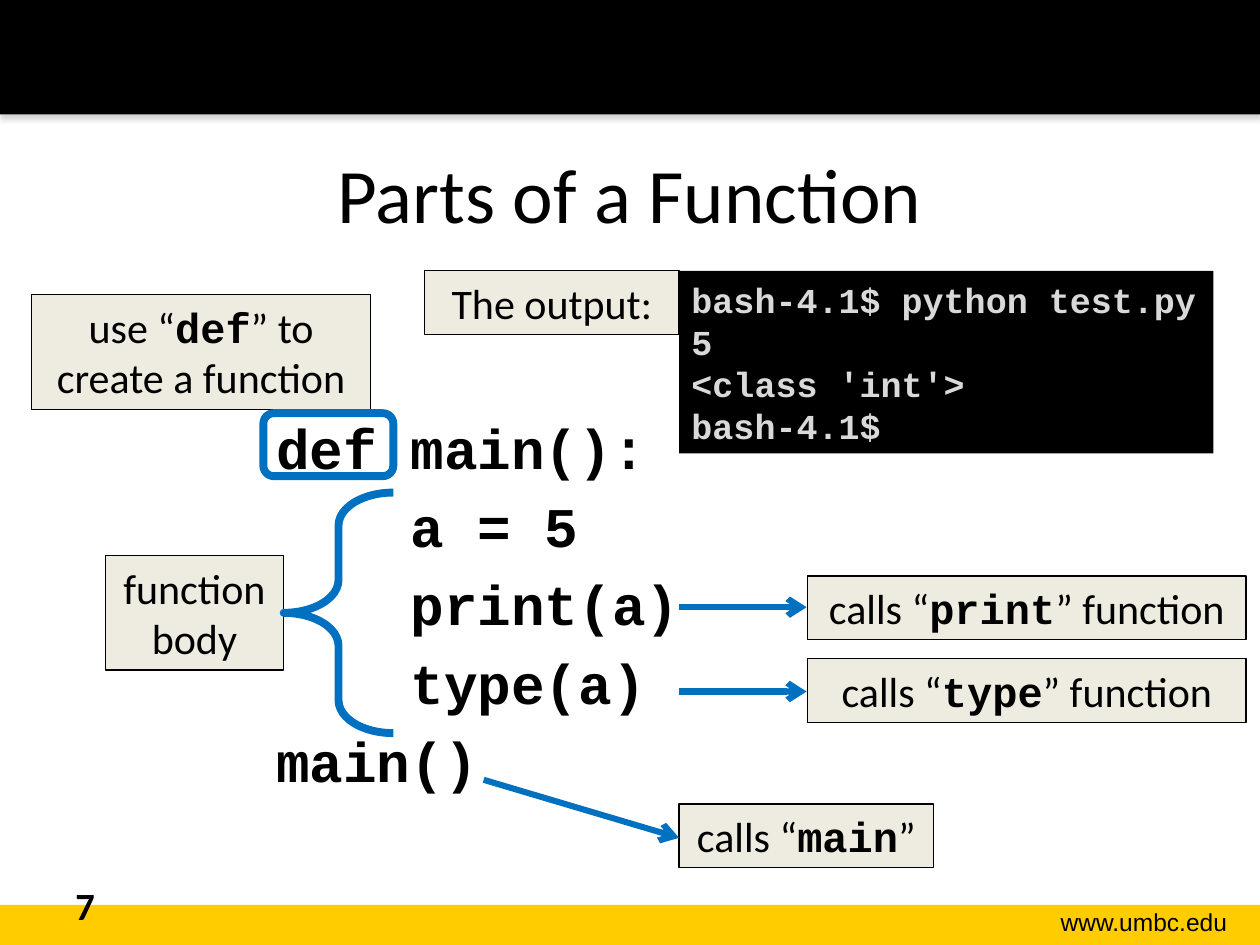
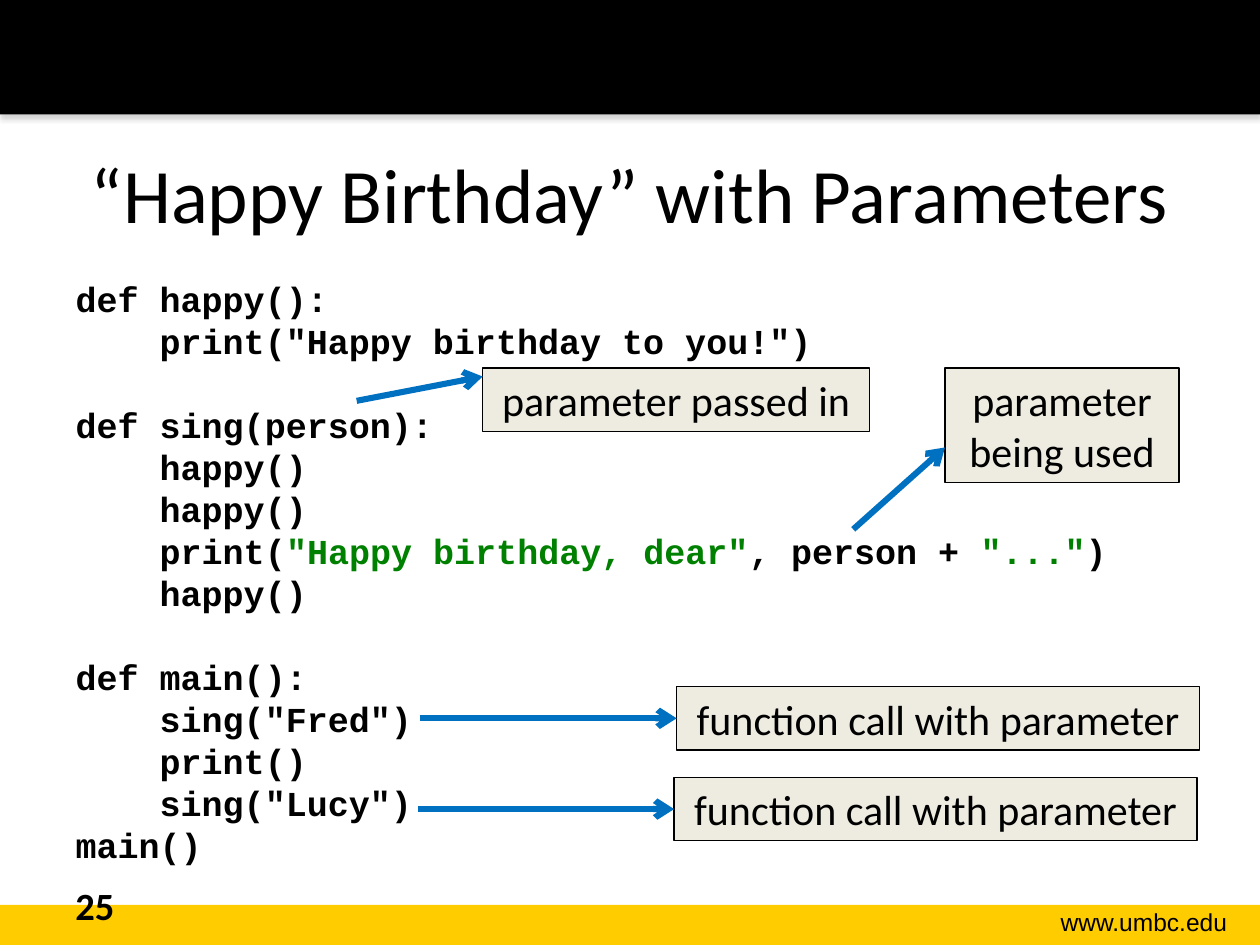
from dataclasses import dataclass

from lxml.etree import SubElement
from pptx import Presentation
from pptx.dml.color import RGBColor
from pptx.enum.shapes import MSO_CONNECTOR as Connector, MSO_SHAPE as Preset
from pptx.enum.text import MSO_ANCHOR as Anchor, MSO_AUTO_SIZE as AutoSize, PP_ALIGN as Align
from pptx.oxml.ns import qn
from pptx.presentation import Presentation as Deck
from pptx.shapes.autoshape import Shape
from pptx.slide import Slide
from pptx.text.text import TextFrame
from pptx.util import Cm, Pt

COLORS = {
    "black": "000000",
    "gold": "FFCC00",
    "cream": "EEECE1",
    "blue": "0070C0",
    "green": "008000",
    "terminal": "D9D9D9",
    "shadow": "808080",
}
MARK = "|"


@dataclass(frozen=True)
class Face:
    font: str
    bold: bool = False
    color: str = "black"


PROSE = Face("Calibri")
STRONG = Face("Calibri", bold=True)
FOOTER = Face("Arial")
CODE = Face("Courier New", bold=True)
STRING = Face("Courier New", bold=True, color="green")
OUTPUT = Face("Courier New", bold=True, color="terminal")


@dataclass(frozen=True)
class Area:
    left: float
    top: float
    width: float
    height: float

    def lengths(self) -> tuple[Cm, Cm, Cm, Cm]:
        return Cm(self.left), Cm(self.top), Cm(self.width), Cm(self.height)


@dataclass(frozen=True)
class Label:
    text: str
    left: float
    top: float
    width: float
    lines: int = 1


@dataclass(frozen=True)
class Arrow:
    start_x: float
    start_y: float
    end_x: float
    end_y: float


@dataclass(frozen=True)
class Listing:
    """Code in groups of lines; line_gap and group_gap are points."""
    groups: tuple[str, ...]
    area: Area
    size: float
    line_gap: float = 0
    group_gap: float = 0


@dataclass(frozen=True)
class Lesson:
    title: str
    number: str
    listing: Listing
    labels: tuple[Label, ...]
    arrows: tuple[Arrow, ...]


PARTS = Lesson(
    "Parts of a Function",
    "7",
    Listing(
        ("def main():\n    a = 5\n    print(a)\n    type(a)\nmain()",),
        Area(5.31, 8.2, 15.54, 9.9), size=32, line_gap=6.4,
    ),
    (
        Label("calls “|print|” function", 16.28, 11.61, 8.84),
        Label("function body", 2.13, 11.2, 3.58, lines=2),
        Label("use “|def|” to create a function", 0.64, 5.94, 6.83, lines=2),
        Label("calls “|type|” function", 16.28, 13.28, 8.84),
        Label("calls “|main|”", 13.69, 16.21, 5.13),
        Label("The output:", 8.56, 5.46, 5.13),
    ),
    (
        Arrow(13.69, 12.24, 16.26, 12.24),
        Arrow(13.69, 13.94, 16.26, 13.94),
        Arrow(9.75, 15.72, 13.69, 16.89),
    ),
)
BIRTHDAY = Lesson(
    "“Happy Birthday” with Parameters",
    "25",
    Listing(
        (
            'def happy():\n    print("Happy birthday to you!")',
            "def sing(person):\n    happy()\n    happy()\n"
            '    print(|"Happy birthday, dear"|, person + |"..."|)\n    happy()',
            'def main():\n    sing("Fred")\n    print()\n    sing("Lucy")\nmain()',
        ),
        Area(1.27, 5.46, 22.86, 11.56), size=20, group_gap=24,
    ),
    (
        Label("parameter passed in", 9.73, 7.42, 7.8),
        Label("parameter being used", 19.05, 7.42, 4.72, lines=2),
        Label("function call with parameter", 13.64, 13.84, 10.54),
        Label("function call with parameter", 13.59, 15.67, 10.54),
    ),
    (
        Arrow(7.19, 8.08, 9.73, 7.59),
        Arrow(17.2, 10.67, 19.05, 9.02),
        Arrow(8.46, 14.48, 13.64, 14.48),
        Arrow(8.43, 16.31, 13.59, 16.31),
    ),
)


def rgb(name: str) -> RGBColor:
    return RGBColor.from_string(COLORS[name])


def write(frame: TextFrame, text: str, size: float, face: Face,
          marked: Face = CODE, align: Align = Align.LEFT) -> None:
    """Fill the frame; spans between marks take the marked face."""
    frame.word_wrap = True
    frame.text = text
    for para in frame.paragraphs:
        first, *others = para.text.split(MARK)
        para.text = first
        para.alignment = align
        for other in others:
            para.add_run().text = other
        for index, span in enumerate(para.runs):
            style = marked if index % 2 else face
            span.font.name = style.font
            span.font.size = Pt(size)
            span.font.bold = style.bold
            span.font.color.rgb = rgb(style.color)


def place(shape: Shape, area: Area) -> None:
    shape.left, shape.top, shape.width, shape.height = area.lengths()


def add_box(page: Slide, area: Area, fill: str | None = None, line: str | None = None,
            weight: float = 0.75, preset: Preset = Preset.RECTANGLE) -> Shape:
    box = page.shapes.add_shape(preset, *area.lengths())
    box.shadow.inherit = False
    if fill:
        box.fill.solid()
        box.fill.fore_color.rgb = rgb(fill)
    else:
        box.fill.background()
    if line:
        box.line.color.rgb = rgb(line)
        box.line.width = Pt(weight)
    else:
        box.line.fill.background()
    return box


def add_text(page: Slide, area: Area, text: str, size: float, face: Face,
             align: Align = Align.LEFT) -> Shape:
    box = page.shapes.add_textbox(*area.lengths())
    write(box.text_frame, text, size, face, align=align)
    return box


def add_label(page: Slide, label: Label) -> None:
    area = Area(label.left, label.top, label.width, 0.25 + 1.03 * label.lines)
    box = add_box(page, area, "cream", "black")
    write(box.text_frame, label.text, 24, PROSE, align=Align.CENTER)


def add_arrow(page: Slide, arrow: Arrow) -> None:
    connector = page.shapes.add_connector(
        Connector.STRAIGHT, Cm(arrow.start_x), Cm(arrow.start_y),
        Cm(arrow.end_x), Cm(arrow.end_y))
    connector.line.color.rgb = rgb("blue")
    connector.line.width = Pt(3.5)
    properties = connector.element.spPr
    SubElement(properties.find(qn("a:ln")), qn("a:tailEnd"), type="arrow")
    SubElement(properties, qn("a:effectLst"))


def add_soft_shadow(shape: Shape) -> None:
    effects = shape.element.spPr.find(qn("a:effectLst"))
    shadow = SubElement(effects, qn("a:outerShdw"), blurRad=str(Pt(3.1)),
                        dist=str(Pt(1.8)), dir="5400000", rotWithShape="0")
    color = SubElement(shadow, qn("a:srgbClr"), val=COLORS["shadow"])
    SubElement(color, qn("a:alpha"), val="35000")


def dress_master(deck: Deck, page: Slide) -> None:
    """Draw the bands and the address on a page, then move them to the master."""
    gold_band = add_box(page, Area(0, 18.24, 25.4, 0.81), "gold")
    black_band = add_box(page, Area(0, 0, 25.4, 2.31), "black")
    add_soft_shadow(black_band)
    address = add_text(page, Area(19.94, 18.16, 5.05, 0.86), "www.umbc.edu", 14,
                       FOOTER, Align.RIGHT)
    for shape in (gold_band, black_band, address):
        deck.slide_master.shapes.element.append(shape.element)


def fill_listing(body: Shape, listing: Listing) -> None:
    place(body, listing.area)
    frame = body.text_frame
    frame.auto_size = AutoSize.NONE
    frame.vertical_anchor = Anchor.TOP
    write(frame, "\n".join(listing.groups), listing.size, CODE, marked=STRING)
    for paragraph in body.element.iter(qn("a:p")):
        properties = paragraph.get_or_add_pPr()
        properties.set("marL", "0")
        properties.set("indent", "0")
        SubElement(properties, qn("a:buNone"))
    starts = [group.split("\n")[0].strip() for group in listing.groups[1:]]
    for index, para in enumerate(frame.paragraphs):
        gap = listing.group_gap if para.text in starts else listing.line_gap
        para.space_before = Pt(gap if index else 0)


def add_lesson(page: Slide, lesson: Lesson) -> None:
    title, body = page.placeholders
    place(title, Area(1.27, 2.29, 22.86, 3.18))
    title.text_frame.vertical_anchor = Anchor.MIDDLE
    title.text_frame.auto_size = AutoSize.NONE
    write(title.text_frame, lesson.title, 44, PROSE, align=Align.CENTER)
    fill_listing(body, lesson.listing)
    add_text(page, Area(1.27, 17.65, 5.92, 1.02), lesson.number, 22, STRONG)
    for label in lesson.labels:
        add_label(page, label)
    for arrow in lesson.arrows:
        add_arrow(page, arrow)


def add_function_marks(page: Slide) -> None:
    """Frame the keyword, brace the function body and show the terminal."""
    add_box(page, Area(5.31, 8.33, 2.62, 1.27), line="blue", weight=4.5,
            preset=Preset.ROUNDED_RECTANGLE)
    brace = add_box(page, Area(5.72, 9.93, 2.21, 4.85), line="blue", weight=4.5,
                    preset=Preset.LEFT_BRACE)
    brace.adjustments[0] = 0.5
    brace.adjustments[0], brace.adjustments[1] = 0.3, 0.5
    terminal = add_box(page, Area(13.69, 5.46, 10.77, 3.68), "black")
    write(terminal.text_frame,
          "bash-4.1$ python test.py\n5\n<class 'int'>\nbash-4.1$", 20, OUTPUT)


def main() -> None:
    deck = Presentation()
    deck.slide_width, deck.slide_height = Cm(25.4), Cm(19.05)
    layout = deck.slide_layouts[1]
    parts_page, birthday_page = (deck.slides.add_slide(layout) for _ in range(2))
    dress_master(deck, parts_page)
    add_lesson(parts_page, PARTS)
    add_function_marks(parts_page)
    add_lesson(birthday_page, BIRTHDAY)
    deck.save("out.pptx")


if __name__ == "__main__":
    main()
